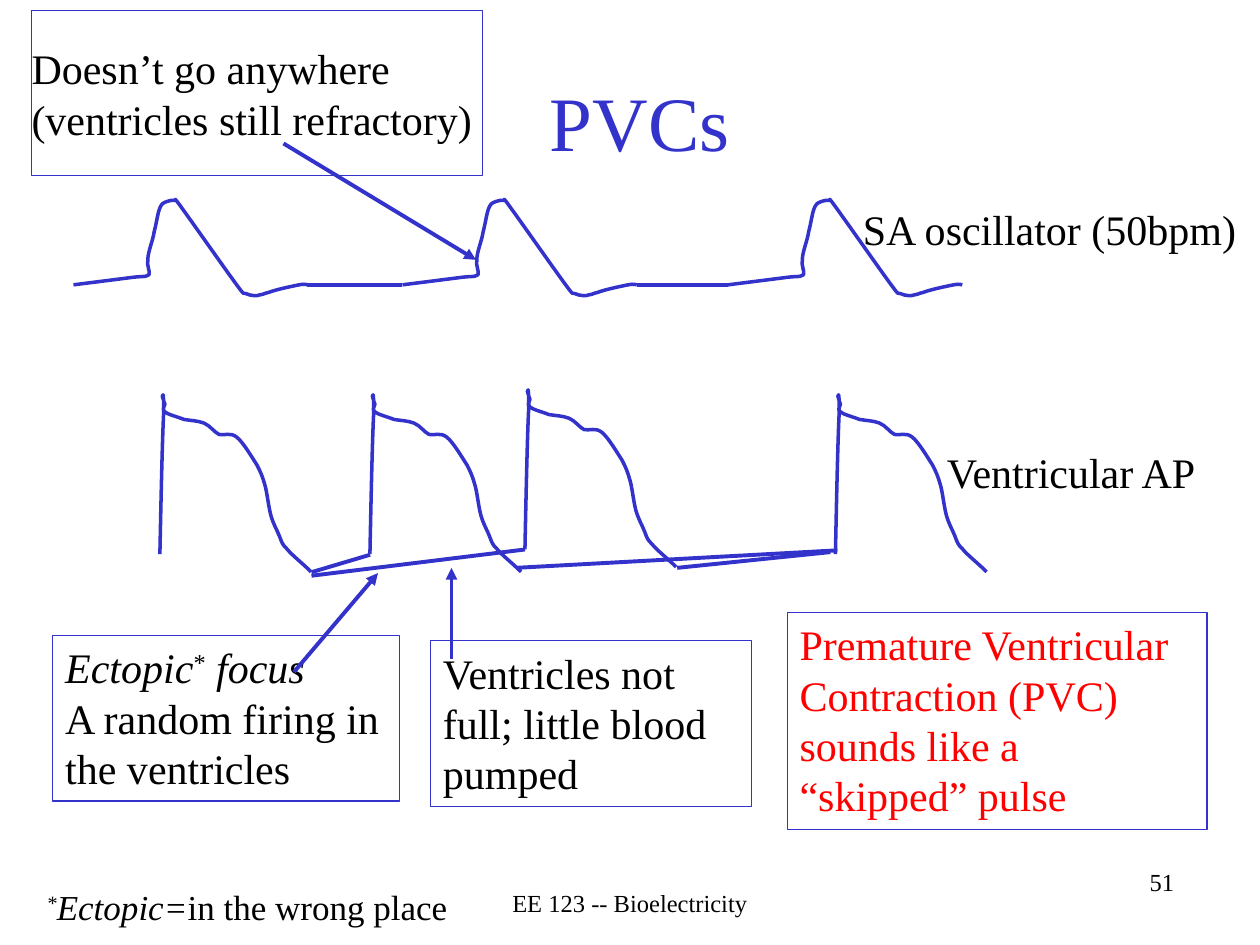
from lxml.etree import SubElement
from pptx import Presentation
from pptx.dml.color import RGBColor
from pptx.enum.shapes import MSO_CONNECTOR, MSO_SHAPE
from pptx.enum.text import MSO_ANCHOR as ANCHOR, MSO_AUTO_SIZE as FIT, PP_ALIGN as ALIGN
from pptx.oxml.ns import qn
from pptx.util import Pt

COLORS = {"blue": "3333CC", "black": "000000", "red": "FF0000"}
FONT = "Times New Roman"

# Paragraphs are lists of (text, style); style letters: i = italic, s = superscript
TITLE = ("PVCs", (54, 24, 623, 90))
BOXES = [  # paragraphs, (left, top, width, height), colour
    ([[("Ectopic", "i"), ("*", "s"), (" focus", "i")],
      [("A random firing in the ventricles", "")]], (30.2, 363.2, 198, 94.5), "black"),
    ([[("Ventricles not full; little blood pumped", "")]], (246, 366.2, 183.5, 94.5), "black"),
    ([[("Premature Ventricular Contraction (PVC) sounds like a “skipped” pulse", "")]],
     (449.8, 350, 240, 124), "red"),
]
REFRACTORY = ([[("Doesn’t go anywhere (ventricles still refractory)", "")]], (18, 6, 257.8, 94.3))
LABELS = [  # paragraphs, (left, top, width, height), size, alignment
    ([[("SA oscillator (50bpm)", "")]], (486, 113, 234, 36), 24, ALIGN.LEFT),
    ([[("Ventricular AP", "")]], (534, 251.8, 168, 36), 24, ALIGN.LEFT),
    ([[("*", "is"), ("Ectopic=", "i"), ("in the wrong place", "")]],
     (19.6, 502.5, 252, 31.5), 20, ALIGN.LEFT),
    ([[("EE 123 -- Bioelectricity", "")]], (246, 504, 228, 24), 14, ALIGN.CENTER),
    ([[("51", "")]], (450, 492, 228, 36), 14, ALIGN.RIGHT),
]

# Waves: a start point, then Bézier segments (control, control, end)
SA_WAVE = (0, 49), [
    ((11.5, 47.5), (23, 46.1), (34.6, 44.6)),
    ((41.8, 43.9), (41.8, 44.6), (43.2, 43.2)),
    ((43.9, 41), (41.8, 38.2), (42.5, 34.6)),
    ((42.5, 30.2), (45.4, 23.8), (46.1, 18.7)),
    ((47.5, 13.7), (48.2, 7.2), (49.7, 4.3)),
    ((51.1, 1.4), (52.6, 2.2), (53.3, 1.4)),
    ((54.7, 0.7), (56.2, 0.7), (57.6, 0.7)),
    ((59, 1.4), (56.2, -2.9), (61.9, 5)),
    ((67.7, 13), (86.4, 39.6), (92.2, 47.5)),
    ((98.6, 56.2), (96.5, 53.3), (98.6, 54)),
    ((101.5, 55.4), (105.1, 55.4), (106.6, 54.7)),
    ((108.7, 54.7), (108, 54), (111.6, 53.3)),
    ((115.2, 51.8), (125.3, 49.7), (128.9, 49)),
    ((132.5, 48.2), (133.2, 49), (133.9, 49)),
]
VENTRICULAR_WAVE = (0, 90.7), [
    ((0.7, 57.6), (1.4, 24.5), (2.2, 9.4)),
    ((2.2, -5.8), (1.4, 1.4), (1.4, 0.7)),
    ((1.4, 0), (2.2, 3.6), (2.9, 5)),
    ((2.9, 6.5), (0.7, 7.9), (2.9, 9.4)),
    ((4.3, 10.8), (10.1, 12.2), (13.7, 13.7)),
    ((18, 14.4), (21.6, 14.4), (25.2, 15.8)),
    ((28.8, 17.3), (31, 20.9), (33.8, 22.3)),
    ((36.7, 23), (40.3, 20.9), (43.9, 23.8)),
    ((47.5, 26.6), (52.6, 35.3), (55.4, 39.6)),
    ((57.6, 43.9), (58.3, 45.4), (59.8, 50.4)),
    ((61.2, 54.7), (61.9, 62.6), (63.4, 68.4)),
    ((64.8, 73.4), (67, 77), (68.4, 80.6)),
    ((69.8, 84.2), (69.8, 85), (72.7, 87.8)),
    ((75.6, 91.4), (81.4, 95.8), (86.4, 100.8)),
]
BEATS = [  # wave, (left, top) of each beat
    (SA_WAVE, [(42, 113.8), (230, 113.8), (416, 113.8)]),
    (VENTRICULAR_WAVE, [(91.4, 226), (211.4, 226), (300, 223.2), (477.4, 226)]),
]
BASELINES = [  # from x, y to x, y
    (175.7, 162.7, 230, 162.7), (364.3, 162.7, 416, 162.7),
    (178, 327, 211.5, 317), (178, 329, 300, 314),
    (295, 324.5, 478.5, 314.5), (387, 324.5, 474.5, 315.5),
]
ARROWS = [(168, 384, 216, 327.5), (258, 376.5, 258, 324.5), (162, 82, 272, 148.5)]


def rgb(name):
    return RGBColor.from_string(COLORS[name])


def style_line(sp, width):
    sp.line.color.rgb = rgb("blue")
    sp.line.width = Pt(width)


def write(sp, paragraphs, size=24, color="black", align=ALIGN.LEFT):
    tf = sp.text_frame
    tf.word_wrap = True
    tf.vertical_anchor = ANCHOR.TOP
    for i, runs in enumerate(paragraphs):
        p = tf.paragraphs[0] if i == 0 else tf.add_paragraph()
        p.alignment = align
        p.font.name, p.font.size, p.font.color.rgb = FONT, Pt(size), rgb(color)
        for text, style in runs:
            r = p.add_run()
            r.text = text
            if "i" in style:
                r.font.italic = True
            if "s" in style:
                r._r.get_or_add_rPr().set("baseline", "30000")
    return tf


def add_box(s, paragraphs, place, color="black"):
    sp = s.shapes.add_shape(MSO_SHAPE.RECTANGLE, *map(Pt, place))
    sp.shadow.inherit = False
    sp.fill.background()
    style_line(sp, 0.75)
    return write(sp, paragraphs, color=color)


def add_wave(s, wave, left, top):
    """Build an open outline through the segment ends, then bend each side into its curve."""
    start, segments = wave
    fb = s.shapes.build_freeform(Pt(left + start[0]), Pt(top + start[1]))
    fb.add_line_segments([(Pt(left + x), Pt(top + y)) for *_, (x, y) in segments], close=False)
    sp = fb.convert_to_shape()
    sides = list(sp._element.iter(qn("a:lnTo")))
    for side, segment in zip(sides, segments):
        curve = SubElement(side.getparent(), qn("a:cubicBezTo"))
        for x, y in segment:
            SubElement(curve, qn("a:pt"), x=str(Pt(left + x) - sp.left),
                       y=str(Pt(top + y) - sp.top))
        side.getparent().replace(side, curve)
    sp.shadow.inherit = False
    sp.fill.background()
    style_line(sp, 2)


def add_line(s, ends, arrow=False):
    line = s.shapes.add_connector(MSO_CONNECTOR.STRAIGHT, *map(Pt, ends))
    style_line(line, 2.25)
    if arrow:
        SubElement(line.line._get_or_add_ln(), qn("a:tailEnd"), type="triangle")
    SubElement(line._element.spPr, qn("a:effectLst"))


def main():
    prs = Presentation()
    prs.slide_width, prs.slide_height = Pt(720), Pt(540)
    s = prs.slides.add_slide(prs.slide_layouts[5])

    text, place = TITLE
    title = s.shapes.title
    title.left, title.top, title.width, title.height = map(Pt, place)
    tf = write(title, [[(text, "")]], 44, "blue", ALIGN.CENTER)
    tf.vertical_anchor = ANCHOR.MIDDLE

    for wave, origins in BEATS:
        for left, top in origins:
            add_wave(s, wave, left, top)
    for ends in BASELINES:
        add_line(s, ends)

    for paragraphs, place, color in BOXES:
        add_box(s, paragraphs, place, color).auto_size = FIT.SHAPE_TO_FIT_TEXT
    tf = add_box(s, *REFRACTORY)
    tf.vertical_anchor = ANCHOR.MIDDLE
    tf.margin_left = tf.margin_right = tf.margin_top = tf.margin_bottom = 0

    for paragraphs, place, size, align in LABELS:
        write(s.shapes.add_textbox(*map(Pt, place)), paragraphs, size, align=align)
    for ends in ARROWS:
        add_line(s, ends, arrow=True)

    prs.save("out.pptx")


if __name__ == "__main__":
    main()
